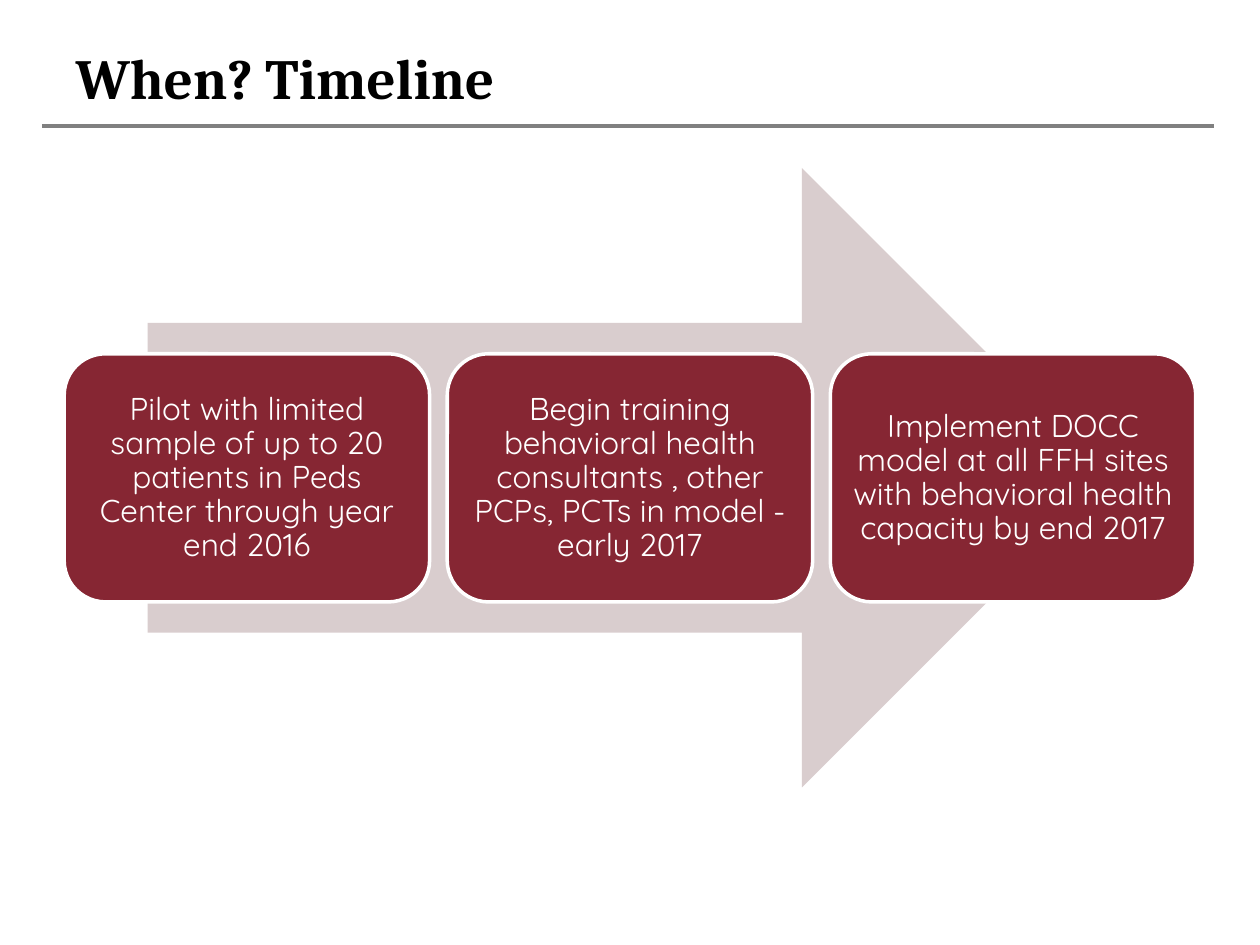
"""Build a timeline slide: three stages in front of a wide arrow."""
from dataclasses import dataclass

from lxml import etree
from pptx import Presentation
from pptx.dml.color import RGBColor
from pptx.enum.shapes import MSO_CONNECTOR as Connector, MSO_SHAPE as Shape
from pptx.enum.text import MSO_ANCHOR as Anchor, MSO_AUTO_SIZE as AutoSize, PP_ALIGN as Align
from pptx.oxml.ns import qn
from pptx.slide import Slide
from pptx.util import Pt

COLORS = {
    "title": "000000",
    "rule": "808080",
    "arrow": "D9CDCE",
    "stage": "862633",
    "white": "FFFFFF",
}
STAGES = [
    "Pilot with limited sample of up to 20 patients in Peds Center through year end 2016",
    "Begin training behavioral health consultants , other PCPs, PCTs in model - early 2017",
    "Implement DOCC model at all FFH sites with behavioral health capacity by end 2017",
]
STAGE_LEFT, STAGE_TOP, STAGE_WIDTH, STAGE_HEIGHT = 36.7, 202.2, 208.8, 141.8
STAGE_PITCH = 218.9


def color(name):
    return RGBColor.from_string(COLORS[name])


@dataclass
class TimelineSlide:
    slide: Slide
    title_font: str = "Cambria"
    body_font: str = "Quicksand"
    title_size: float = 32.4
    body_size: float = 18

    def add_run(self, paragraph, text, name, size, color_name, bold=False):
        run = paragraph.add_run()
        run.text = text
        font = run.font
        font.name, font.size, font.bold = name, Pt(size), bold
        font.color.rgb = color(color_name)

    def add_title(self, text, left, top, width, height):
        title = self.slide.shapes.title
        title.left, title.top, title.width, title.height = map(Pt, (left, top, width, height))
        frame = title.text_frame
        frame.auto_size = AutoSize.NONE
        frame.vertical_anchor = Anchor.MIDDLE
        paragraph = frame.paragraphs[0]
        paragraph.alignment = Align.LEFT
        self.add_run(paragraph, text, self.title_font, self.title_size, "title", True)

    def add_rule(self, left, right, top):
        rule = self.slide.shapes.add_connector(
            Connector.STRAIGHT, Pt(left), Pt(top), Pt(right), Pt(top))
        rule.line.color.rgb = color("rule")
        rule.line.width = Pt(2.25)
        etree.SubElement(rule._element.spPr, qn("a:effectLst"))

    def add_shape(self, kind, fill, left, top, width, height):
        shape = self.slide.shapes.add_shape(kind, *map(Pt, (left, top, width, height)))
        shape.shadow.inherit = False
        shape.fill.solid()
        shape.fill.fore_color.rgb = color(fill)
        shape.line.fill.background()
        return shape

    def add_stage(self, text, left):
        shape = self.add_shape(
            Shape.ROUNDED_RECTANGLE, "stage", left, STAGE_TOP, STAGE_WIDTH, STAGE_HEIGHT)
        shape.line.color.rgb = color("white")
        shape.line.width = Pt(2)
        frame = shape.text_frame
        frame.word_wrap = True
        frame.vertical_anchor = Anchor.MIDDLE
        frame.margin_left = frame.margin_right = Pt(5.4)
        frame.margin_top = frame.margin_bottom = Pt(5.4)
        paragraph = frame.paragraphs[0]
        paragraph.alignment = Align.CENTER
        paragraph.line_spacing = 0.9
        self.add_run(paragraph, text, self.body_font, self.body_size, "white")


def main():
    presentation = Presentation()
    presentation.slide_width, presentation.slide_height = Pt(720), Pt(540)
    timeline = TimelineSlide(presentation.slides.add_slide(presentation.slide_layouts[5]))
    timeline.add_rule(24, 693.5, 72)
    timeline.add_title("When? Timeline", 36, 21.6, 648, 44.6)
    timeline.add_shape(Shape.RIGHT_ARROW, "arrow", 84.4, 96, 550.8, 354)
    for index, text in enumerate(STAGES):
        timeline.add_stage(text, STAGE_LEFT + index * STAGE_PITCH)
    presentation.save("out.pptx")


if __name__ == "__main__":
    main()
